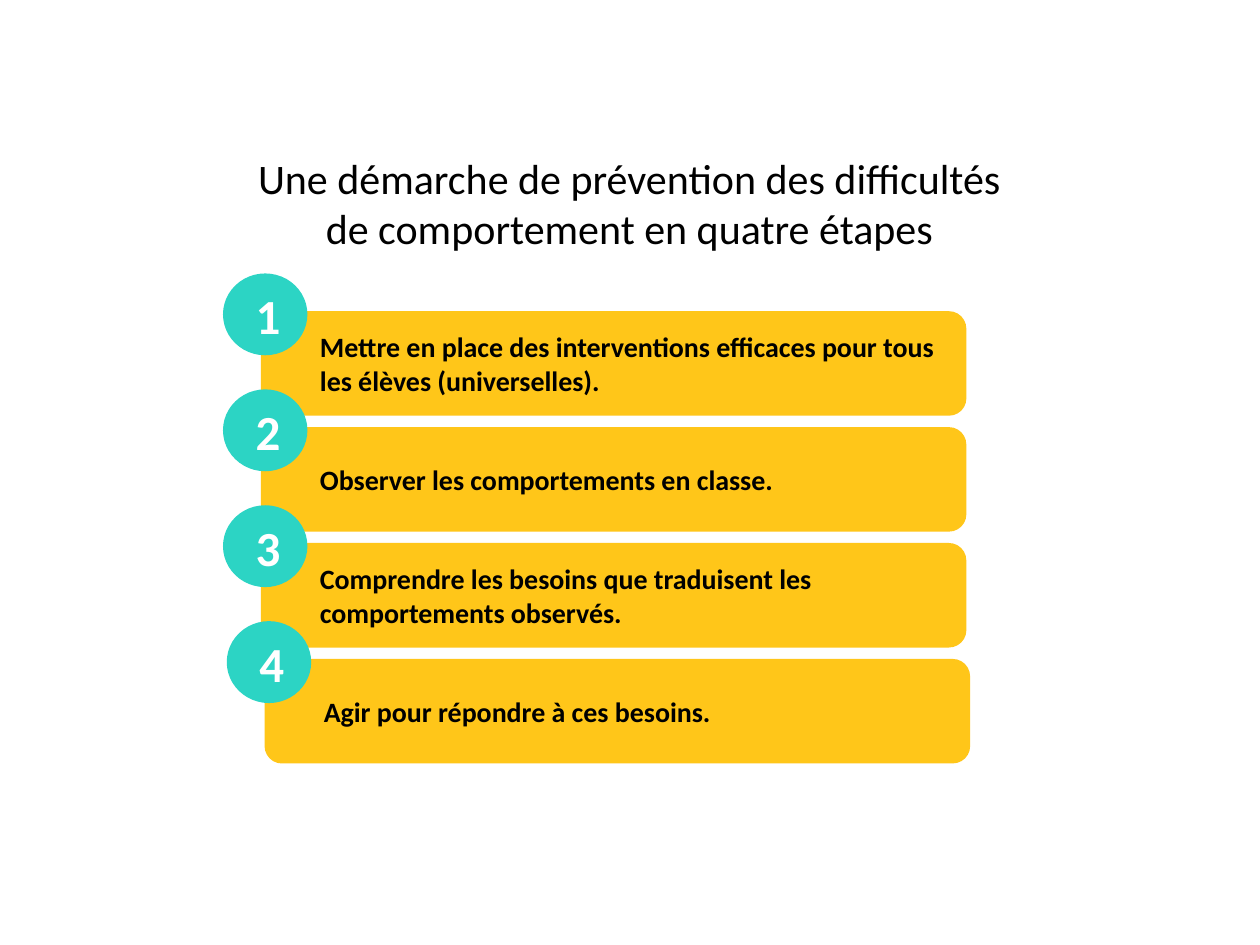
from lxml import etree
from pptx import Presentation
from pptx.dml.color import RGBColor
from pptx.enum.shapes import MSO_SHAPE
from pptx.enum.text import MSO_ANCHOR, MSO_AUTO_SIZE, PP_ALIGN
from pptx.oxml.ns import qn
from pptx.util import Inches, Pt

BLACK = RGBColor(0x00, 0x00, 0x00)
WHITE = RGBColor(0xFF, 0xFF, 0xFF)
GOLD = RGBColor(0xFF, 0xC0, 0x00)
TEAL = RGBColor(0x2C, 0xD4, 0xC4)

ROUND, OVAL = MSO_SHAPE.ROUNDED_RECTANGLE, MSO_SHAPE.OVAL
TOP, MIDDLE = MSO_ANCHOR.TOP, MSO_ANCHOR.MIDDLE
LEFT, CENTER = PP_ALIGN.LEFT, PP_ALIGN.CENTER
NO_FIT = MSO_AUTO_SIZE.NONE

TITLE = ("Une démarche de prévention des difficultés "
         "de comportement en quatre étapes")
STEPS = [
    "Mettre en place des interventions efficaces pour tous\n"
    "les élèves (universelles).",
    "Observer les comportements en classe.",
    "Comprendre les besoins que traduisent les comportements observés.",
    "Agir pour répondre à ces besoins.",
]
FIRST, PITCH = 2.17, 0.92
EDGE, SHIFT = 1.77, 0.03  # the last step sits slightly to the right


def write(frame, text, size=16, color=BLACK, bold=False, align=LEFT,
          anchor=TOP, font="Calibri"):
    frame.word_wrap = True
    frame.auto_size = NO_FIT
    frame.vertical_anchor = anchor
    para = frame.paragraphs[0]
    para.text = text
    para.alignment = align
    for run in para.runs:
        run.font.name = font
        run.font.size = Pt(size)
        run.font.bold = bold
        run.font.color.rgb = color


class Deck:
    def __init__(self):
        self.prs = Presentation()
        self.prs.slide_width = Inches(10)
        self.prs.slide_height = Inches(7.5)
        self.slide = self.prs.slides.add_slide(self.prs.slide_layouts[5])

    def title(self, text, x, y, w, h):
        box = self.slide.shapes.title
        box.left, box.top = Inches(x), Inches(y)
        box.width, box.height = Inches(w), Inches(h)
        write(box.text_frame, text, size=24, align=CENTER)

    def shape(self, group, kind, x, y, w, h, color, alpha=None):
        shape = group.shapes.add_shape(
            kind, Inches(x), Inches(y), Inches(w), Inches(h))
        shape.shadow.inherit = False
        shape.fill.solid()
        shape.fill.fore_color.rgb = color
        shape.line.fill.background()
        if alpha is not None:
            tint = shape.fill._xPr.find(".//" + qn("a:srgbClr"))
            etree.SubElement(tint, qn("a:alpha"), val=str(alpha * 1000))

    def text(self, group, text, x, y, w, h, inset=None, **style):
        frame = group.shapes.add_textbox(
            Inches(x), Inches(y), Inches(w), Inches(h)).text_frame
        if inset is not None:
            frame.margin_left = frame.margin_right = Inches(inset)
            frame.margin_top = frame.margin_bottom = Inches(inset)
        write(frame, text, **style)

    def step(self, num, text, x, y):
        group = self.slide.shapes.add_group_shape()
        # Bar and its label
        self.shape(group, ROUND, x + 0.3, y + 0.3, 5.6, 0.83, GOLD, alpha=90)
        self.text(group, text, x + 0.74, y + 0.34, 5.4, 0.75,
                  inset=0.03, bold=True, anchor=MIDDLE)
        # Numbered badge
        self.shape(group, OVAL, x, y, 0.67, 0.65, TEAL)
        self.text(group, str(num), x + 0.16, y + 0.05, 0.38, 0.53,
                  size=28, color=WHITE, bold=True)


def main():
    deck = Deck()
    deck.title(TITLE, 1.77, 1.16, 6.45, 0.91)

    # Four stacked steps
    for i, text in enumerate(STEPS):
        x = EDGE + (SHIFT if i == len(STEPS) - 1 else 0)
        deck.step(i + 1, text, x, FIRST + i * PITCH)

    deck.prs.save("out.pptx")


if __name__ == "__main__":
    main()
